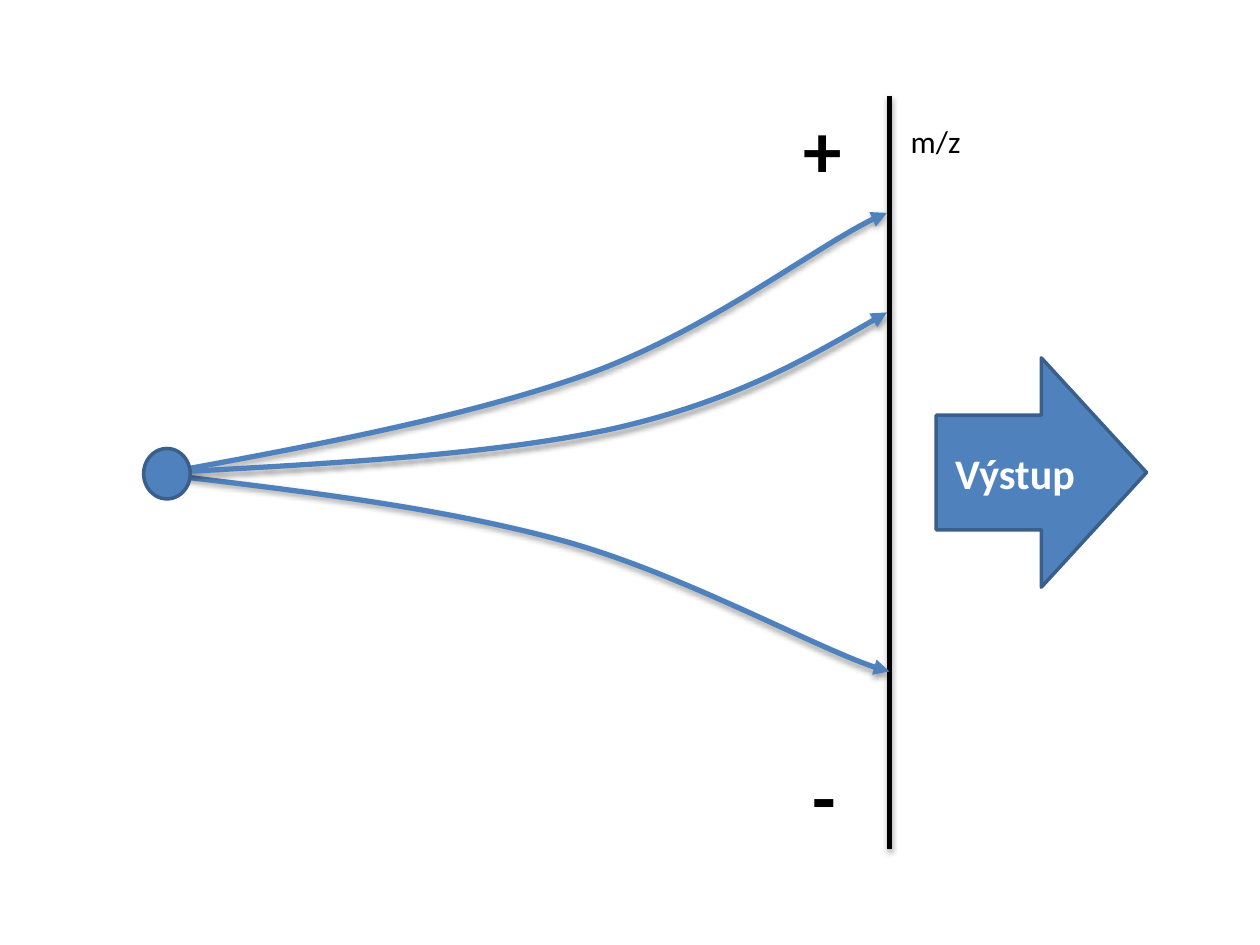
from lxml.etree import SubElement
from pptx import Presentation
from pptx.dml.color import RGBColor
from pptx.enum.shapes import MSO_CONNECTOR, MSO_SHAPE
from pptx.enum.text import MSO_ANCHOR, MSO_AUTO_SIZE, PP_ALIGN
from pptx.oxml import parse_xml
from pptx.oxml.ns import nsdecls, qn
from pptx.util import Pt

PX = 9144  # 100 px to the inch
BLUE, DARK_BLUE, BLACK, WHITE = "4F81BD", "3A5F8C", "000000", "FFFFFF"
SHADOW = f"""<a:effectLst {nsdecls("a")}>
  <a:outerShdw blurRad="40000" dist="23000" dir="5400000" rotWithShape="0">
    <a:srgbClr val="000000"><a:alpha val="35000"/></a:srgbClr>
  </a:outerShdw>
</a:effectLst>"""


def paint(color_format, color):
    """Give a fill a solid colour, or set a font's colour."""
    if hasattr(color_format, "solid"):
        color_format.solid()
        color_format = color_format.fore_color
    color_format.rgb = RGBColor.from_string(color)


def write(shape, text, size, color=BLACK, bold=False, align=PP_ALIGN.LEFT):
    para = shape.text_frame.paragraphs[0]
    para.alignment = align
    span = para.add_run()
    span.text = text
    span.font.name = "Calibri"
    span.font.size = Pt(size)
    span.font.bold = bold
    paint(span.font.color, color)


deck = Presentation()
deck.slide_width, deck.slide_height = 1000 * PX, 750 * PX
page = deck.slides.add_slide(deck.slide_layouts[6])
shapes = page.shapes

# Detector line
detector = shapes.add_connector(
    MSO_CONNECTOR.STRAIGHT, 706 * PX, 76 * PX, 706 * PX, 674 * PX)
paint(detector.line.fill, BLACK)
shadowed = [detector]

# Ion trajectories: a start, then three points for each Bézier section
trajectories = [
    [(133, 377), (242, 390), (350, 403), (446, 429),
     (541, 455), (663, 523), (706, 533)],
    [(133, 375), (253, 353), (374, 330), (469, 296),
     (564, 261), (660, 186), (704, 169)],
    [(133, 375), (263, 368), (392, 361), (488, 340),
     (583, 318), (643, 283), (704, 248)],
]
for start, *points in trajectories:
    builder = shapes.build_freeform(*start, scale=PX)
    builder.add_line_segments(points, close=False)
    curve = builder.convert_to_shape()
    segments = list(curve._element.iter(qn("a:lnTo")))
    outline = segments[0].getparent()
    for first in range(0, len(segments), 3):
        bezier = SubElement(outline, qn("a:cubicBezTo"))
        for segment in segments[first:first + 3]:
            bezier.append(segment[0])
            outline.remove(segment)
    curve.fill.background()
    paint(curve.line.fill, BLUE)
    SubElement(curve.line._get_or_add_ln(), qn("a:tailEnd"), type="triangle")
    shadowed.append(curve)

for stroke in shadowed:
    stroke.line.width = Pt(3)
    stroke._element.spPr.append(parse_xml(SHADOW))

# Ion source and output arrow
source = shapes.add_shape(
    MSO_SHAPE.OVAL, 114 * PX, 356 * PX, 37 * PX, 40 * PX)
output = shapes.add_shape(
    MSO_SHAPE.RIGHT_ARROW, 743 * PX, 284 * PX, 167 * PX, 182 * PX)
for shape in (source, output):
    shape.shadow.inherit = False
    paint(shape.fill, BLUE)
    paint(shape.line.fill, DARK_BLUE)
    shape.line.width = Pt(2)
output.text_frame.vertical_anchor = MSO_ANCHOR.MIDDLE
write(output, "Výstup", 24, color=WHITE, bold=True, align=PP_ALIGN.CENTER)

# Labels beside the detector
labels = [
    ("m/z", 713, 92, 60, 40, 18, False, PP_ALIGN.LEFT),
    ("+", 628, 76, 51, 84, 44, True, PP_ALIGN.LEFT),
    ("-", 634, 589, 39, 84, 44, True, PP_ALIGN.RIGHT),
]
for text, left, top, width, height, size, bold, align in labels:
    box = shapes.add_textbox(left * PX, top * PX, width * PX, height * PX)
    box.text_frame.word_wrap = False
    box.text_frame.auto_size = MSO_AUTO_SIZE.SHAPE_TO_FIT_TEXT
    write(box, text, size, bold=bold, align=align)

deck.save("out.pptx")
